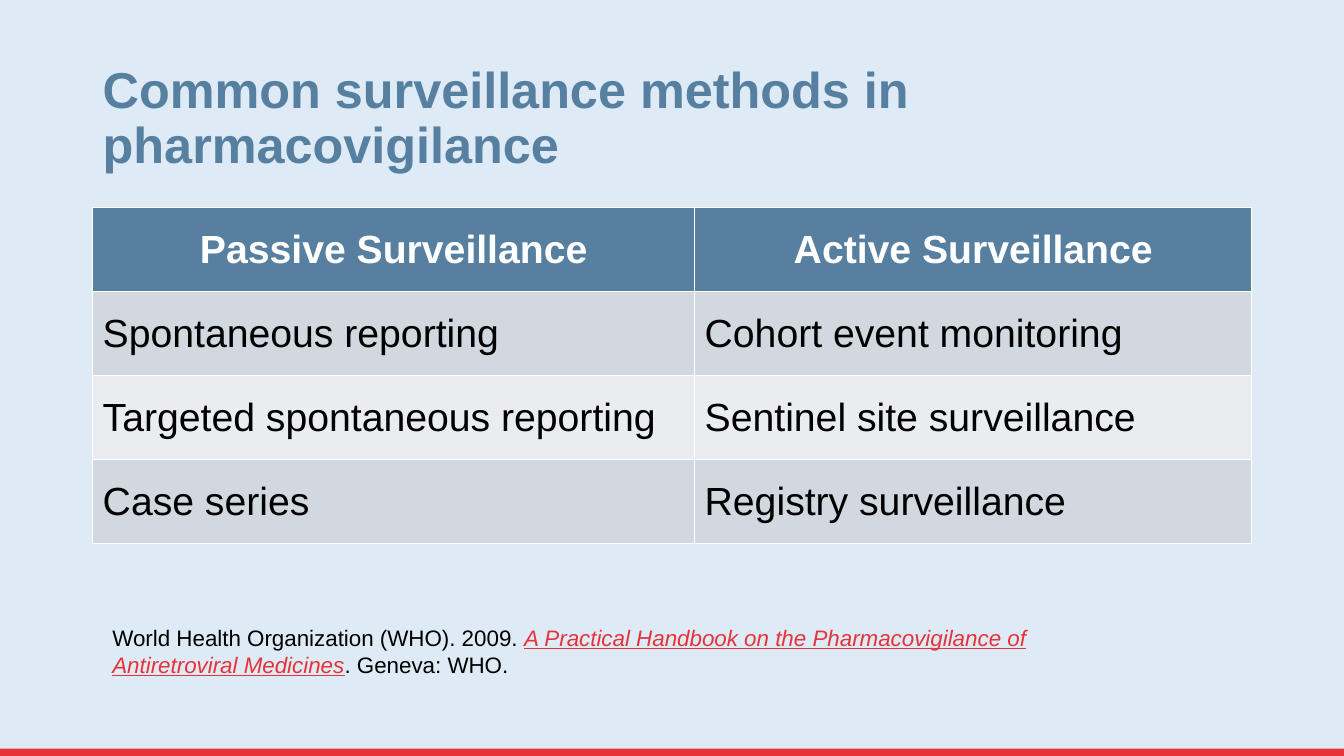
from pptx import Presentation
from pptx.dml.color import RGBColor
from pptx.enum.shapes import MSO_SHAPE as Shape
from pptx.enum.text import MSO_ANCHOR as Anchor, MSO_AUTO_SIZE as AutoSize, PP_ALIGN as Align
from pptx.util import Pt

PALE_BLUE = RGBColor(0xDE, 0xEB, 0xF7)
STEEL_BLUE = RGBColor(0x57, 0x7F, 0x9F)
RED = RGBColor(0xE7, 0x34, 0x39)
LINK_RED = RGBColor(0xE6, 0x33, 0x39)
BAND_DARK = RGBColor(0xD1, 0xD8, 0xDF)
BAND_LIGHT = RGBColor(0xEA, 0xEC, 0xF0)
WHITE = RGBColor(0xFF, 0xFF, 0xFF)
BLACK = RGBColor(0, 0, 0)

WIDTH, HEIGHT = 960, 540
LEFT = 66.2

METHODS = [
    ("Passive Surveillance", "Active Surveillance"),
    ("Spontaneous reporting", "Cohort event monitoring"),
    ("Targeted spontaneous reporting", "Sentinel site surveillance"),
    ("Case series", "Registry surveillance"),
]
CITATION = [
    ("World Health Organization (WHO). 2009. ", False),
    ("A Practical Handbook on the Pharmacovigilance of Antiretroviral Medicines", True),
    (". Geneva: WHO.", False),
]


class SlideBuilder:
    font_name = "Arial"

    def __init__(self, presentation):
        self.slide = presentation.slides.add_slide(presentation.slide_layouts[5])

    def style(self, run, size, color, bold=False):
        run.font.name = self.font_name
        run.font.size = Pt(size)
        run.font.bold = bold
        run.font.color.rgb = color

    def background(self, color):
        fill = self.slide.background.fill
        fill.solid()
        fill.fore_color.rgb = color

    def bar(self, left, top, width, height, color):
        shape = self.slide.shapes.add_shape(
            Shape.RECTANGLE, Pt(left), Pt(top), Pt(width), Pt(height))
        shape.shadow.inherit = False
        shape.fill.solid()
        shape.fill.fore_color.rgb = color
        shape.line.fill.background()

    def title(self, text, left, top, width, height):
        title = self.slide.shapes.title
        title.left, title.top = Pt(left), Pt(top)
        title.width, title.height = Pt(width), Pt(height)
        frame = title.text_frame
        frame.text = text
        frame.word_wrap = True
        frame.auto_size = AutoSize.NONE
        frame.vertical_anchor = Anchor.BOTTOM
        paragraph = frame.paragraphs[0]
        paragraph.alignment = Align.LEFT
        paragraph.line_spacing = 0.9
        self.style(paragraph.runs[0], 36, STEEL_BLUE, bold=True)

    def table(self, rows, left, top, column_widths, row_height):
        table = self.slide.shapes.add_table(
            len(rows), len(column_widths), Pt(left), Pt(top),
            Pt(sum(column_widths)), Pt(row_height * len(rows))).table
        for column, width in zip(table.columns, column_widths):
            column.width = Pt(width)
        for row_index, row in enumerate(rows):
            header = row_index == 0
            band = BAND_DARK if row_index % 2 else BAND_LIGHT
            for column_index, text in enumerate(row):
                cell = table.cell(row_index, column_index)
                cell.fill.solid()
                cell.fill.fore_color.rgb = STEEL_BLUE if header else band
                cell.margin_top = cell.margin_bottom = Pt(13.5)
                cell.vertical_anchor = Anchor.MIDDLE
                cell.text_frame.text = text
                paragraph = cell.text_frame.paragraphs[0]
                paragraph.alignment = Align.CENTER if header else Align.LEFT
                self.style(paragraph.runs[0], 28, WHITE if header else BLACK, bold=header)

    def citation(self, parts, left, top, width, height):
        frame = self.slide.shapes.add_textbox(
            Pt(left), Pt(top), Pt(width), Pt(height)).text_frame
        frame.word_wrap = True
        for text, is_source in parts:
            run = frame.paragraphs[0].add_run()
            run.text = text
            self.style(run, 16, LINK_RED if is_source else BLACK)
            run.font.italic = run.font.underline = is_source


def main():
    presentation = Presentation()
    presentation.slide_width, presentation.slide_height = Pt(WIDTH), Pt(HEIGHT)
    builder = SlideBuilder(presentation)
    builder.background(PALE_BLUE)
    builder.bar(0, 534.8, WIDTH, 5.2, RED)
    builder.title("Common surveillance methods in pharmacovigilance", LEFT, 65.5, 828, 62.6)
    builder.table(METHODS, LEFT, 148.4, (430, 398), 60)
    builder.citation(CITATION, 73.2, 442, 677.5, 46)
    presentation.save("out.pptx")


if __name__ == "__main__":
    main()
